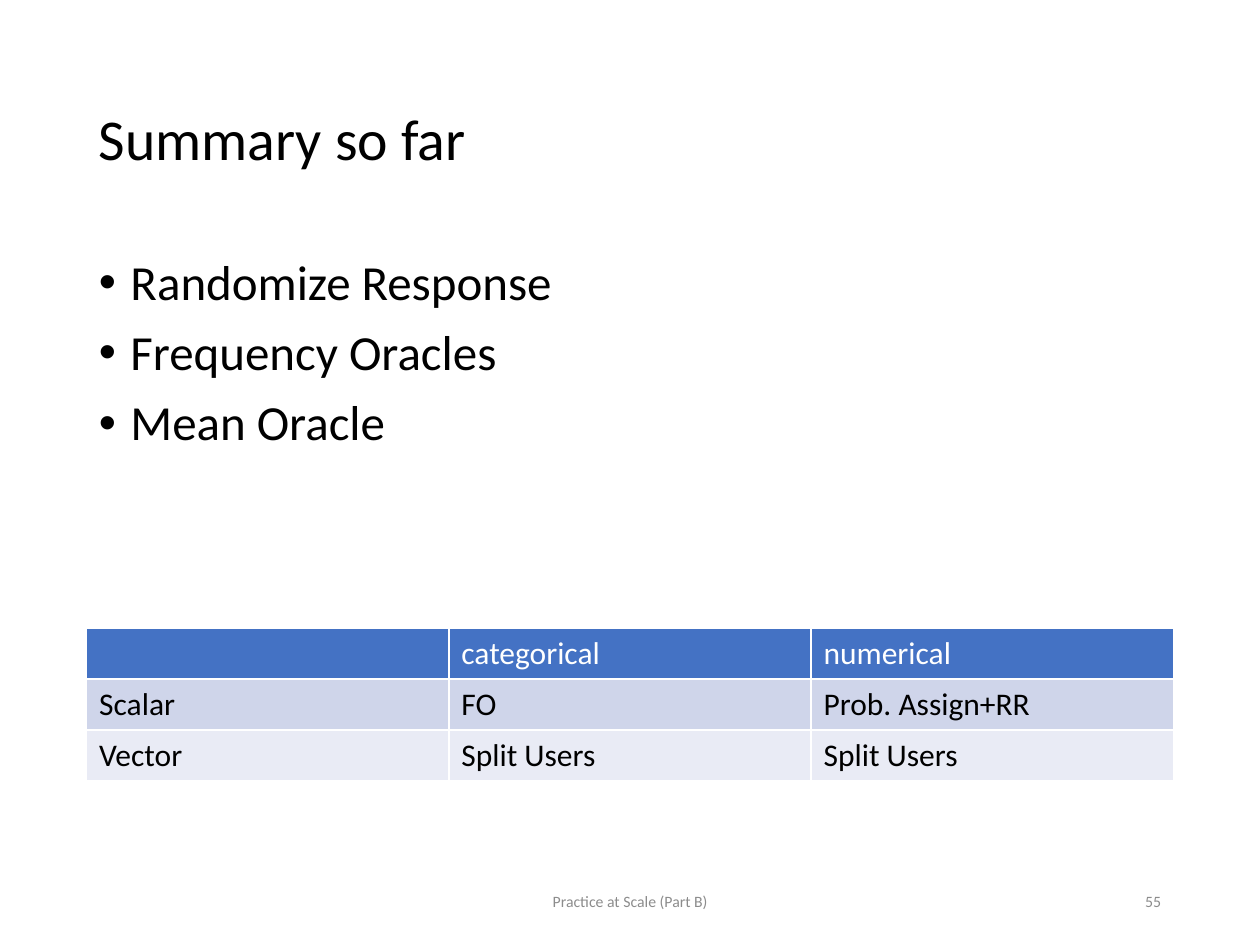
from lxml import etree
from pptx import Presentation
from pptx.dml.color import RGBColor
from pptx.enum.text import MSO_ANCHOR, PP_ALIGN
from pptx.oxml.ns import qn
from pptx.util import Pt

LEFT, CENTER, RIGHT = PP_ALIGN.LEFT, PP_ALIGN.CENTER, PP_ALIGN.RIGHT
TOP, MIDDLE = MSO_ANCHOR.TOP, MSO_ANCHOR.MIDDLE

FONT = "Calibri"
COLORS = {
    "background": "FFFFFF",
    "text": "000000",
    "footer": "8C8C8C",
    "header": "4472C4",
    "header_text": "FFFFFF",
    "odd_row": "CFD5EA",
    "even_row": "E9EBF5",
    "border": "FFFFFF",
}
MARGIN, CONTENT_WIDTH = 49.5, 621


def rgb(name):
    return RGBColor.from_string(COLORS[name])


def write(frame, text, size=18, color="text", align=LEFT, anchor=TOP,
          line_spacing=1, space_before=0, bullet=None, indent=18):
    """Write each line of text as one paragraph."""
    frame.word_wrap = True
    frame.vertical_anchor = anchor
    for index, line in enumerate(text.split("\n")):
        paragraph = frame.paragraphs[0] if index == 0 else frame.add_paragraph()
        if bullet:
            properties = paragraph._p.get_or_add_pPr()
            properties.set("marL", str(Pt(indent)))
            properties.set("indent", str(-Pt(indent)))
            etree.SubElement(properties, qn("a:buFont"), typeface="Arial")
            etree.SubElement(properties, qn("a:buChar"), char=bullet)
        paragraph.alignment = align
        paragraph.line_spacing = line_spacing
        paragraph.space_before = Pt(space_before if index else 0)
        run = paragraph.add_run()
        run.text = line
        run.font.name = FONT
        run.font.size = Pt(size)
        run.font.bold = False
        run.font.color.rgb = rgb(color)


def add_text(slide, box, text, **text_format):
    text_box = slide.shapes.add_textbox(*map(Pt, box))
    write(text_box.text_frame, text, **text_format)


def set_borders(cell, width=1):
    properties = cell._tc.get_or_add_tcPr()
    for position, side in enumerate(("a:lnL", "a:lnR", "a:lnT", "a:lnB")):
        line = etree.Element(qn(side), w=str(Pt(width)))
        fill = etree.SubElement(line, qn("a:solidFill"))
        etree.SubElement(fill, qn("a:srgbClr"), val=COLORS["border"])
        properties.insert(position, line)


def add_method_table(slide, box, rows):
    left, top, width, height = box
    table = slide.shapes.add_table(len(rows), len(rows[0]), *map(Pt, box)).table
    for column in table.columns:
        column.width = Pt(width / len(rows[0]))
    for row_index, labels in enumerate(rows):
        table.rows[row_index].height = Pt(height / len(rows))
        is_header = row_index == 0
        fill = "header" if is_header else ("even_row", "odd_row")[row_index % 2]
        for column_index, label in enumerate(labels):
            cell = table.cell(row_index, column_index)
            cell.fill.solid()
            cell.fill.fore_color.rgb = rgb(fill)
            set_borders(cell)
            if label:
                write(cell.text_frame, label,
                      color="header_text" if is_header else "text")


def add_footer(slide, box, caption, number):
    left, top, width, height = box
    caption_width, number_width = 243, 162
    footer_format = {"size": 9, "color": "footer", "anchor": MIDDLE}
    add_text(slide, (left + width - number_width, top, number_width, height),
             number, align=RIGHT, **footer_format)
    add_text(slide, (left + (width - caption_width) / 2, top, caption_width, height),
             caption, align=CENTER, **footer_format)


def main():
    presentation = Presentation()
    presentation.slide_width, presentation.slide_height = Pt(720), Pt(540)
    slide = presentation.slides.add_slide(presentation.slide_layouts[6])
    slide.background.fill.solid()
    slide.background.fill.fore_color.rgb = rgb("background")

    add_text(slide, (MARGIN, 28.8, CONTENT_WIDTH, 104.4), "Summary so far",
             size=33, anchor=MIDDLE, line_spacing=0.9)
    add_text(slide, (MARGIN, 143.75, CONTENT_WIDTH, 342.6),
             "Randomize Response\nFrequency Oracles\nMean Oracle",
             size=28, line_spacing=0.9, space_before=10, bullet="•")
    add_method_table(slide, (MARGIN, 358.8, CONTENT_WIDTH, 87.6), [
        ("", "categorical", "numerical"),
        ("Scalar", "FO", "Prob. Assign+RR"),
        ("Vector", "Split Users", "Split Users"),
    ])
    add_footer(slide, (MARGIN, 500.5, CONTENT_WIDTH, 28.75),
               "Practice at Scale (Part B)", "55")
    presentation.save("out.pptx")


if __name__ == "__main__":
    main()
